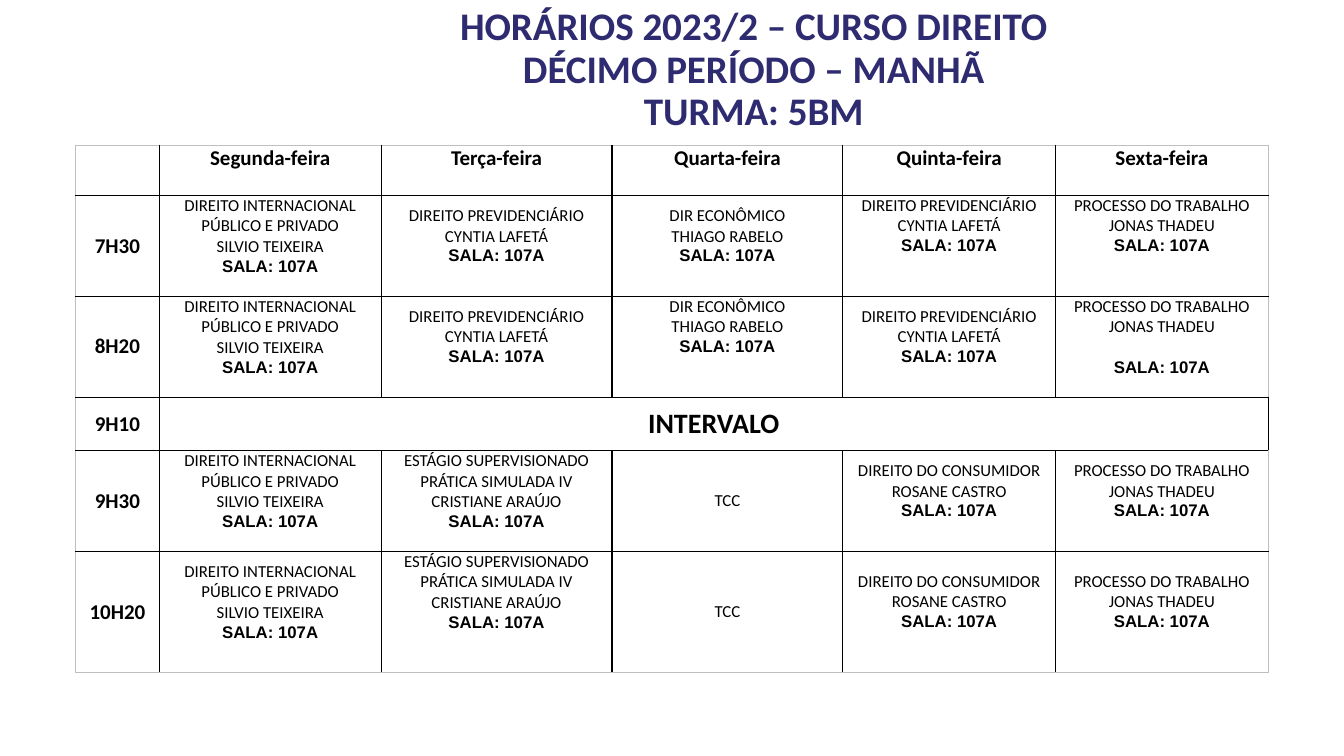
import pptx
import pptx.dml.color
import pptx.enum.text
import pptx.oxml
import pptx.oxml.ns
import pptx.util

Inches = pptx.util.Inches
Pt = pptx.util.Pt
RGBColor = pptx.dml.color.RGBColor
MSO_ANCHOR = pptx.enum.text.MSO_ANCHOR

NAVY = RGBColor(0x2E, 0x2B, 0x71)
BLACK = RGBColor(0, 0, 0)
GRAY = RGBColor(0xBF, 0xBF, 0xBF)

TITLE = ["HORÁRIOS 2023/2 – CURSO DIREITO", "DÉCIMO PERÍODO – MANHÃ", "TURMA: 5BM"]
DAYS = ["Segunda-feira", "Terça-feira", "Quarta-feira", "Quinta-feira", "Sexta-feira"]
ROOM = "SALA: 107A"
INTERNACIONAL = ["DIREITO INTERNACIONAL", "PÚBLICO E PRIVADO", "SILVIO TEIXEIRA", ROOM]
PREVIDENCIARIO = ["DIREITO PREVIDENCIÁRIO", "CYNTIA LAFETÁ", ROOM]
ECONOMICO = ["DIR ECONÔMICO", "THIAGO RABELO", ROOM]
TRABALHO = ["PROCESSO DO TRABALHO", "JONAS THADEU", ROOM]
ESTAGIO = ["ESTÁGIO SUPERVISIONADO", "PRÁTICA SIMULADA IV", "CRISTIANE ARAÚJO", ROOM]
CONSUMIDOR = ["DIREITO DO CONSUMIDOR", "ROSANE CASTRO", ROOM]
TCC = ["TCC"]

# Each lesson is (lines, top inset in half lines); None centres it.
LESSONS = {
    1: ("7H30", [(INTERNACIONAL, 0), (PREVIDENCIARIO, 1), (ECONOMICO, 1),
                 (PREVIDENCIARIO, 0), (TRABALHO, 0)]),
    2: ("8H20", [(INTERNACIONAL, 0), (PREVIDENCIARIO, 1), (ECONOMICO, 0),
                 (PREVIDENCIARIO, 1), (TRABALHO, 0)]),
    4: ("9H30", [(INTERNACIONAL, 0), (ESTAGIO, 0), (TCC, None),
                 (CONSUMIDOR, 1), (TRABALHO, 1)]),
    5: ("10H20", [(INTERNACIONAL, 1), (ESTAGIO, 0), (TCC, None),
                  (CONSUMIDOR, 2), (TRABALHO, 2)]),
}
BREAK_ROW = 3
COLS = [0.83, 2.2, 2.29, 2.29, 2.11, 2.11]
ROWS = [0.5, 1, 1, 0.53, 1, 1.2]
HALF_LINE = 0.1


def style(p, size, bold=True, name="Calibri", color=BLACK):
    p.alignment = pptx.enum.text.PP_ALIGN.CENTER
    p.font.size = Pt(size)
    p.font.bold = bold
    p.font.name = name
    p.font.color.rgb = color


def add_title(slide, left, top, width, height):
    sp = slide.shapes.add_textbox(Inches(left), Inches(top), Inches(width), Inches(height))
    tf = sp.text_frame
    tf.word_wrap = True
    tf.vertical_anchor = MSO_ANCHOR.MIDDLE
    tf.margin_top = tf.margin_bottom = 0
    p = tf.paragraphs[0]
    p.text = "\v".join(TITLE)
    p.line_spacing = 0.9
    style(p, 27.9, color=NAVY)


def set_borders(cell, sides):
    tcPr = cell._tc.get_or_add_tcPr()
    ns = pptx.oxml.ns.nsdecls("a")
    for i, (side, color) in enumerate(sides.items()):
        tcPr.insert(i, pptx.oxml.parse_xml(
            f'<a:{side} {ns} w="12700"><a:solidFill><a:srgbClr val="{color}"/>'
            f'</a:solidFill></a:{side}>'))


def fill_cell(cell, lines, size, bold=True, inset=None):
    tf = cell.text_frame
    cell.vertical_anchor = MSO_ANCHOR.MIDDLE if inset is None else MSO_ANCHOR.TOP
    cell.margin_top = Inches(HALF_LINE * (inset or 0))
    for i, line in enumerate(lines):
        p = tf.paragraphs[0] if i == 0 else tf.add_paragraph()
        p.text = line
        if line == ROOM:
            style(p, size, True, "Arial")
        else:
            style(p, size, bold)


def add_timetable(slide, left, top):
    last_row, last_col = len(ROWS) - 1, len(COLS) - 1
    frame = slide.shapes.add_table(len(ROWS), len(COLS), Inches(left), Inches(top),
                                   Inches(sum(COLS)), Inches(sum(ROWS)))
    table = frame.table
    table.first_row = table.horz_banding = False
    for column, width in zip(table.columns, COLS):
        column.width = Inches(width)
    for r, height in enumerate(ROWS):
        table.rows[r].height = Inches(height)
        for c in range(len(COLS)):
            cell = table.cell(r, c)
            cell.fill.background()
            cell.margin_left = cell.margin_right = Inches(0.05)
            cell.margin_top = cell.margin_bottom = 0
            set_borders(cell, {
                "lnL": GRAY if c == 0 else BLACK,
                "lnR": GRAY if c == last_col else BLACK,
                "lnT": GRAY if r == 0 else BLACK,
                "lnB": GRAY if r == last_row else BLACK})
    for c, day in enumerate(DAYS, 1):
        fill_cell(table.cell(0, c), [day], 15, inset=0)
    for r, (hour, lessons) in LESSONS.items():
        fill_cell(table.cell(r, 0), [hour], 15)
        for c, (lines, inset) in enumerate(lessons, 1):
            fill_cell(table.cell(r, c), lines, 12, False, inset)
    table.cell(2, last_col).text_frame.paragraphs[-1].space_before = Pt(14.6)
    fill_cell(table.cell(BREAK_ROW, 0), ["9H10"], 15)
    table.cell(BREAK_ROW, 1).merge(table.cell(BREAK_ROW, last_col))
    fill_cell(table.cell(BREAK_ROW, 1), ["INTERVALO"], 20)


def main():
    prs = pptx.Presentation()
    prs.slide_width, prs.slide_height = Inches(13.33), Inches(7.5)
    slide = prs.slides.add_slide(prs.slide_layouts[6])
    add_title(slide, 3.28, 0.06, 8.39, 1.28)
    add_timetable(slide, 0.75, 1.44)
    prs.save("out.pptx")


if __name__ == "__main__":
    main()
